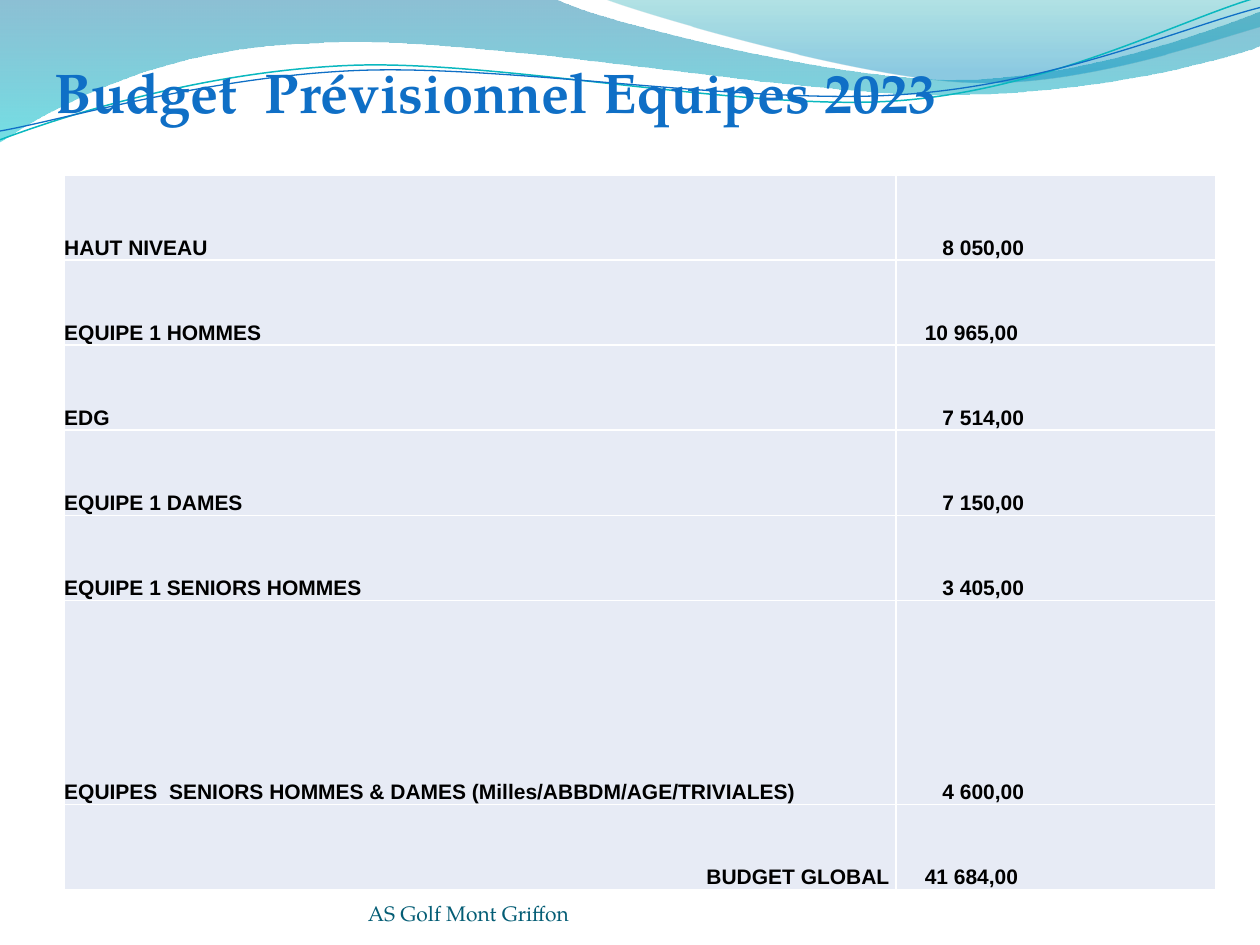
from lxml import etree
from pptx import Presentation
from pptx.dml.color import RGBColor
from pptx.enum.text import MSO_ANCHOR, MSO_AUTO_SIZE, PP_ALIGN
from pptx.oxml.ns import qn
from pptx.util import Inches, Pt

BOTTOM = MSO_ANCHOR.BOTTOM
NO_FIT = MSO_AUTO_SIZE.NONE
LEFT, RIGHT = PP_ALIGN.LEFT, PP_ALIGN.RIGHT
SERIF, SANS = "TeX Gyre Pagella", "Arial"
BLUE, TEAL = "0F6FC6", "0AB8BF"


def rgb(value):
    return RGBColor.from_string(value)


def write(tf, text, font=SERIF, size=12, color="000000", bold=False,
          align=LEFT, margins=(0, 0, 0, 0)):
    tf.word_wrap = True
    tf.margin_left, tf.margin_top, tf.margin_right, tf.margin_bottom = map(Inches, margins)
    p = tf.paragraphs[0]
    p.alignment = align
    r = p.add_run()
    r.text = text
    r.font.name, r.font.size, r.font.bold = font, Pt(size), bold
    r.font.color.rgb = rgb(color)


class Deck:
    def __init__(self, prs):
        self.s = prs.slides.add_slide(prs.slide_layouts[5])

    def freeform(self, start, segments, close):
        """A segment holds x, y of a line end, or the six values of a curve."""
        fb = self.s.shapes.build_freeform(*map(Inches, start))
        for seg in segments:
            points = [(Inches(x), Inches(y)) for x, y in zip(seg[::2], seg[1::2])]
            fb.add_line_segments(points, close=False)
        if close:
            fb.add_line_segments([], close=True)
        sp = fb.convert_to_shape()
        sp.shadow.inherit = False
        # Join the three points of each curve into one cubic segment
        steps = iter(list(sp._element.spPr.iter(qn("a:lnTo"))))
        for seg in segments:
            first = next(steps)
            if len(seg) == 6:
                curve = etree.Element(qn("a:cubicBezTo"))
                first.addprevious(curve)
                for step in (first, next(steps), next(steps)):
                    curve.append(step[0])
                    step.getparent().remove(step)
        return sp

    def wave(self, start, segments, stops):
        sp = self.freeform(start, segments, True)
        sp.line.fill.background()
        sp.fill.gradient()
        sp.fill.gradient_angle = 270
        for stop, (position, color, _) in zip(sp.fill.gradient_stops, stops):
            stop.position = position
            stop.color.rgb = rgb(color)
        colors = sp._element.spPr.iter(qn("a:srgbClr"))
        for clr, (_, _, opacity) in zip(colors, stops):
            etree.SubElement(clr, qn("a:alpha"), val=str(opacity * 1000))

    def strand(self, start, segments, color, width):
        sp = self.freeform(start, segments, False)
        sp.fill.background()
        sp.line.color.rgb = rgb(color)
        sp.line.width = Pt(width)

    def title(self, text, x, y, w, h):
        sp = self.s.shapes.title
        sp.left, sp.top, sp.width, sp.height = map(Inches, (x, y, w, h))
        tf = sp.text_frame
        tf.auto_size, tf.vertical_anchor = NO_FIT, BOTTOM
        write(tf, text, size=32, color=BLUE, bold=True, margins=(0, 0.05, 0, 0))
        self.s.shapes._spTree.append(sp._element)  # in front of the waves

    def text(self, text, x, y, w, h, **fmt):
        tf = self.s.shapes.add_textbox(*map(Inches, (x, y, w, h))).text_frame
        tf.vertical_anchor = BOTTOM
        write(tf, text, **fmt)

    def cell(self, cell, text, left=0, right=0, align=LEFT):
        cell.fill.solid()
        cell.fill.fore_color.rgb = rgb("E7EBF5")
        cell.vertical_anchor = BOTTOM
        write(cell.text_frame, text, font=SANS, bold=True, align=align)
        cell.margin_left, cell.margin_right = Inches(left), Inches(right)
        cell.margin_top = cell.margin_bottom = 0
        tc_pr = cell._tc.get_or_add_tcPr()
        for i, side in enumerate(("lnL", "lnR", "lnT", "lnB")):
            ln = etree.Element(qn("a:" + side), w=str(Pt(1)))
            fill = etree.SubElement(ln, qn("a:solidFill"))
            etree.SubElement(fill, qn("a:srgbClr"), val="FFFFFF")
            tc_pr.insert(i, ln)

    def budget_table(self, rows, x, y, widths, heights):
        frame = self.s.shapes.add_table(len(rows), 2, *map(
            Inches, (x, y, sum(widths), sum(heights))))
        table = frame.table
        table.first_row = table.horz_banding = False
        for col, w in zip(table.columns, widths):
            col.width = Inches(w)
        for row, h in zip(table.rows, heights):
            row.height = Inches(h)
        for i, (label, amount) in enumerate(rows):
            if i == len(rows) - 1:
                self.cell(table.cell(i, 0), label, right=0.05, align=RIGHT)
            else:
                self.cell(table.cell(i, 0), label)
            self.cell(table.cell(i, 1), amount, left=0.23 if len(amount) > 8 else 0.37)


def main():
    prs = Presentation()
    prs.slide_width, prs.slide_height = Inches(10), Inches(7.5)
    deck = Deck(prs)

    # Waves along the top
    deck.wave((0, 0), [(4.4, -0.01), (4.76, 0.17, 6.64, 0.63, 7.58, 0.63),
                       (8.53, 0.63, 9.58, 0.26, 10, 0.09), (10.01, 0.36),
                       (9.83, 0.44, 8.7, 0.76, 7.46, 0.75),
                       (6.22, 0.75, 3.82, 0.28, 2.57, 0.34),
                       (1.29, 0.36, 0.46, 0.83, -0.01, 1.13)],
              [(0, "0074A1", 45), (1, "00C6CF", 55)])
    deck.wave((4.79, -0.01), [(5.09, 0.11, 6.82, 0.62, 7.69, 0.65),
                              (8.56, 0.69, 9.61, 0.32, 10, 0.21), (10, 0)],
              [(0, "00A1A9", 30), (0.8, "008BBF", 45)])
    deck.strand((0, 1.11), [(0.48, 0.93, 1.58, 0.57, 2.77, 0.52),
                            (3.95, 0.47, 5.93, 0.89, 7.13, 0.8),
                            (8.33, 0.71, 9.38, 0.15, 9.98, -0.02)], TEAL, 0.85)
    deck.strand((0, 1.04), [(0.47, 0.96, 1.64, 0.61, 2.83, 0.56),
                            (4.03, 0.51, 5.97, 0.84, 7.17, 0.75),
                            (8.36, 0.67, 9.41, 0.21, 10, 0.06)], BLUE, 0.75)

    # Title and footer
    deck.title("Budget  Prévisionnel Equipes 2023", 0.43, 0.29, 9, 0.7)
    deck.text("AS Golf Mont Griffon", 2.92, 6.95, 3.67, 0.4, color="045D75")

    # Budget by team, total last
    rows = [
        ("HAUT NIVEAU", "8 050,00"),
        ("EQUIPE 1 HOMMES", "10 965,00"),
        ("EDG", "7 514,00"),
        ("EQUIPE 1 DAMES", "7 150,00"),
        ("EQUIPE 1 SENIORS HOMMES", "3 405,00"),
        ("EQUIPES  SENIORS HOMMES & DAMES (Milles/ABBDM/AGE/TRIVIALES)", "4 600,00"),
        ("BUDGET GLOBAL", "41 684,00"),
    ]
    tall = 1.62
    regular = (5.67 - tall) / (len(rows) - 1)
    heights = [regular] * 5 + [tall, regular]
    deck.budget_table(rows, 0.51, 1.39, (6.6, 2.54), heights)

    prs.save("out.pptx")


if __name__ == "__main__":
    main()
